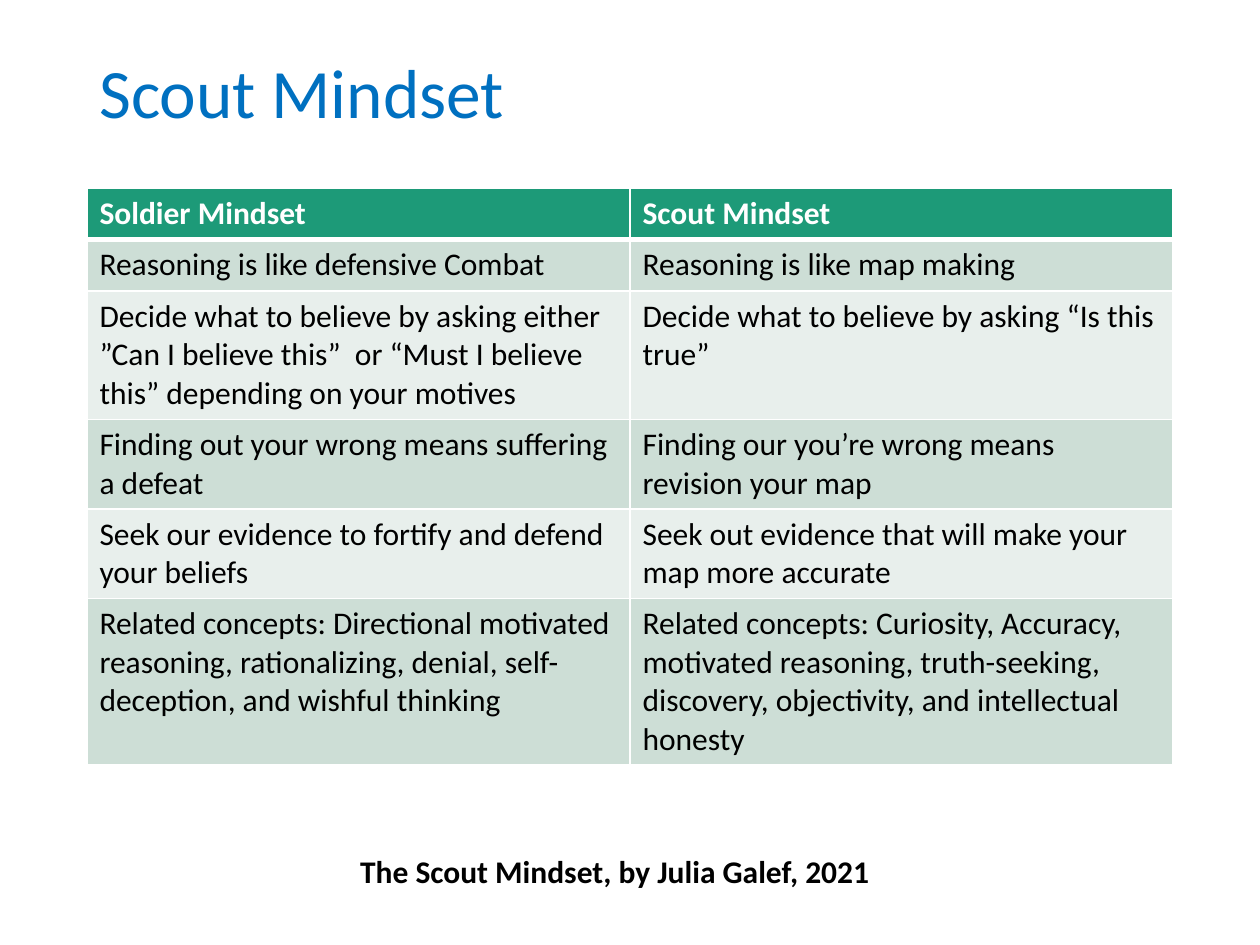
from lxml.etree import SubElement
from pptx import Presentation
from pptx.dml.color import RGBColor
from pptx.enum.text import MSO_ANCHOR, MSO_AUTO_SIZE
from pptx.oxml.ns import qn
from pptx.util import Inches, Pt

COLORS = {
    "title": "0070C0",
    "header": "1D9A78",
    "dark_band": "CDDED6",
    "light_band": "E8EFEC",
    "white": "FFFFFF",
    "black": "000000",
}

TITLE = {"size": Pt(39.6), "bold": False}
STRONG = {"size": Pt(18), "bold": True}
BODY = {"size": Pt(18), "bold": False}

MINDSETS = [
    (0.41, "Soldier Mindset", "Scout Mindset"),
    (0.41, "Reasoning is like defensive Combat", "Reasoning is like map making"),
    (1.02, "Decide what to believe by asking either ”Can I believe this”  or "
           "“Must I believe this” depending on your motives",
     "Decide what to believe by asking “Is this true”"),
    (0.71, "Finding out your wrong means suffering a defeat",
     "Finding our you’re wrong means revision your map"),
    (0.71, "Seek our evidence to fortify and defend your beliefs",
     "Seek out evidence that will make your map more accurate"),
    (1.32, "Related concepts: Directional motivated reasoning, rationalizing, "
           "denial, self-deception, and wishful thinking",
     "Related concepts: Curiosity, Accuracy, motivated reasoning, "
     "truth-seeking, discovery, objectivity, and intellectual honesty"),
]


def write(frame, text, style, color):
    para = frame.paragraphs[0]
    span = para.add_run()
    span.text = text
    span.font.name = "Calibri"
    span.font.color.rgb = RGBColor.from_string(COLORS[color])
    for name, value in style.items():
        setattr(span.font, name, value)
    return para


def add_text(page, place, text, style, color, settings):
    box = page.shapes.add_textbox(*map(Inches, place))
    for name, value in settings.items():
        setattr(box.text_frame, name, value)
    return write(box.text_frame, text, style, color)


def set_borders(cell, widths):
    properties = cell._tc.get_or_add_tcPr()
    for side, width in widths.items():
        line = SubElement(properties, qn(f"a:ln{side}"), w=str(Pt(width)))
        fill = SubElement(line, qn("a:solidFill"))
        SubElement(fill, qn("a:srgbClr"), val=COLORS["white"])


def fill_cell(cell, text, row):
    header = row == 0
    band = "header" if header else "dark_band" if row % 2 else "light_band"
    set_borders(cell, {"L": 1, "R": 1, "T": 3 if row == 1 else 1, "B": 3 if header else 1})
    cell.fill.solid()
    cell.fill.fore_color.rgb = RGBColor.from_string(COLORS[band])
    write(cell.text_frame, text, STRONG if header else BODY, "white" if header else "black")


def add_mindset_table(page):
    height = sum(row[0] for row in MINDSETS)
    place = map(Inches, (0.69, 1.49, 8.62, height))
    table = page.shapes.add_table(len(MINDSETS), 2, *place).table
    for row, (row_height, *texts) in enumerate(MINDSETS):
        table.rows[row].height = Inches(row_height)
        for column, text in enumerate(texts):
            fill_cell(table.cell(row, column), text, row)


def main():
    deck = Presentation()
    deck.slide_width, deck.slide_height = Inches(10), Inches(7.5)
    page = deck.slides.add_slide(deck.slide_layouts[6])
    title = add_text(page, (0.69, 0.4, 8.62, 0.72), "Scout Mindset", TITLE, "title",
                     {"word_wrap": True, "vertical_anchor": MSO_ANCHOR.MIDDLE})
    title.line_spacing = 0.9
    add_mindset_table(page)
    add_text(page, (2.76, 6.71, 4.28, 0.4), "The Scout Mindset, by Julia Galef, 2021",
             STRONG, "black",
             {"word_wrap": False, "auto_size": MSO_AUTO_SIZE.SHAPE_TO_FIT_TEXT})
    deck.save("out.pptx")


if __name__ == "__main__":
    main()
